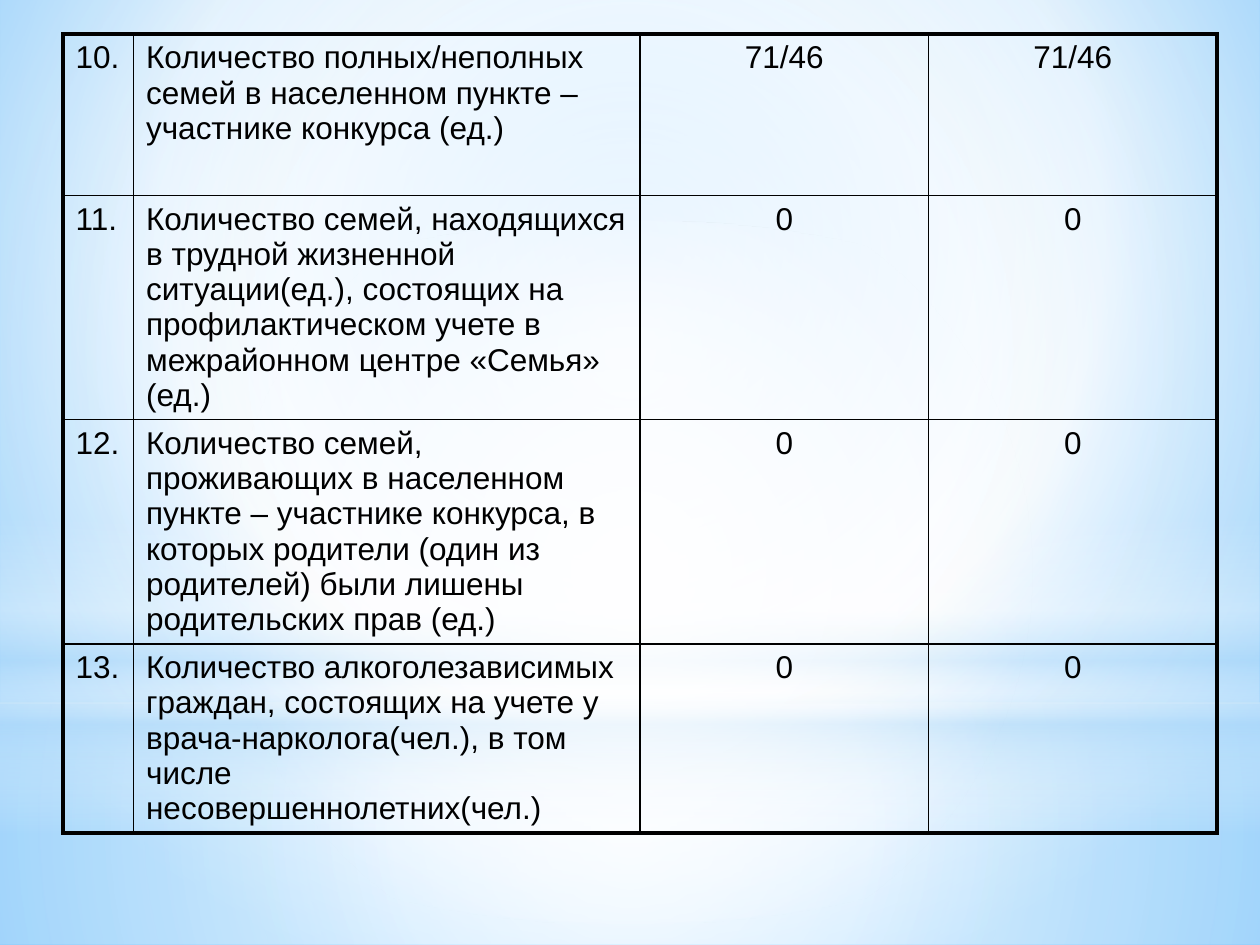
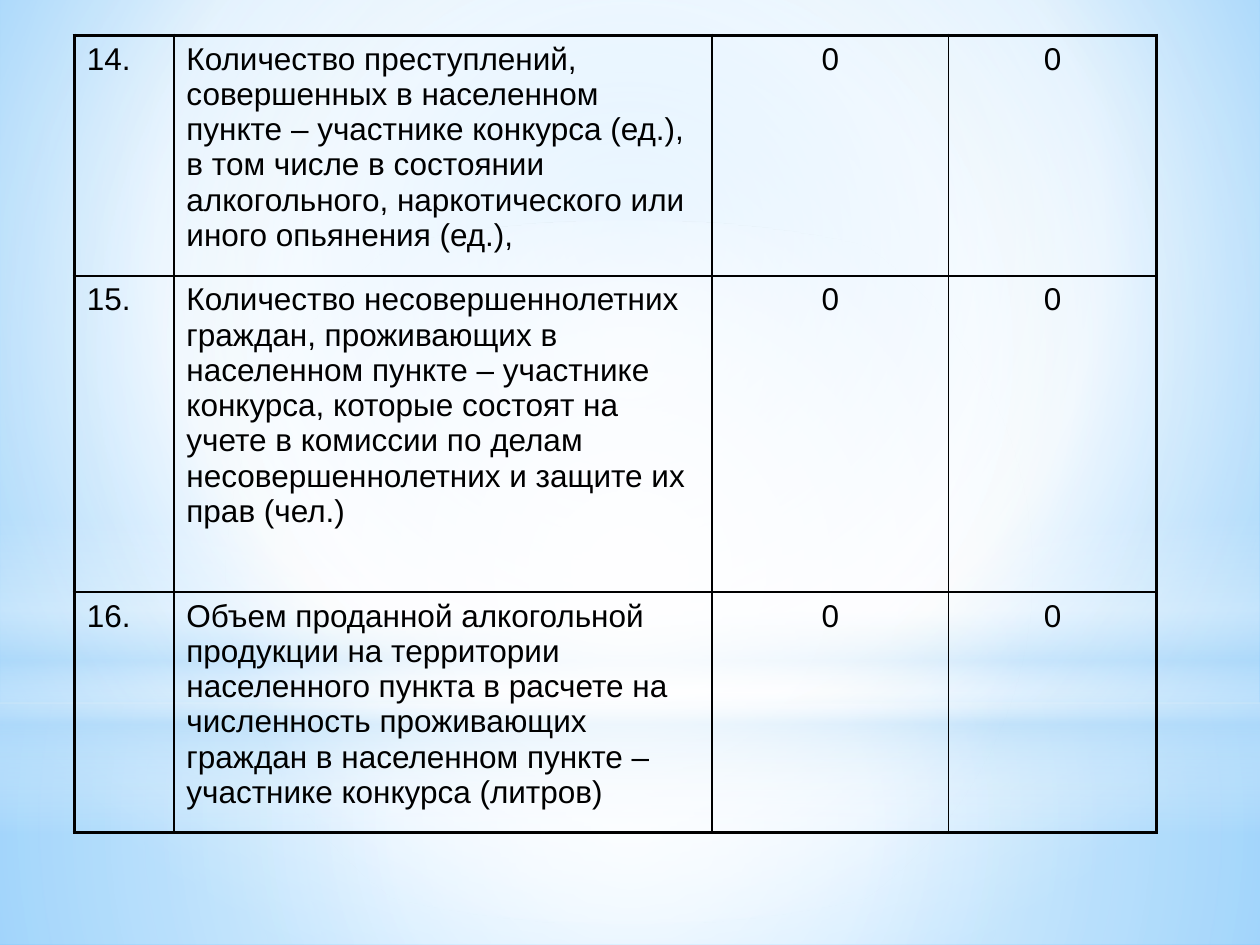
"""Builds two slides of a numbered indicator table over a shared sky background."""
from dataclasses import dataclass
from typing import Any, NamedTuple

from pptx import Presentation
from pptx.dml.color import RGBColor
from pptx.enum.shapes import MSO_SHAPE as Shape
from pptx.enum.text import PP_ALIGN as Align
from pptx.oxml import parse_xml
from pptx.oxml.ns import nsdecls, qn
from pptx.util import Inches, Length, Pt

GRID_COLUMNS, GRID_ROWS = 100, 75
SLIDE_WIDTH, SLIDE_HEIGHT = Inches(10), Inches(7.5)
WHITE, MIST, BLACK = "FFFFFF", "B4DCFA", "000000"
INNER_LINE, OUTER_LINE = Pt(1), Pt(2.25)
CENTRE = (50, 50, 50, 50)


class Stop(NamedTuple):
    position: int
    colour: str
    opacity: int = 100


class Area(NamedTuple):
    left: float
    top: float
    width: float
    height: float


class Indicator(NamedTuple):
    number: str
    wording: str
    before: str = "0"
    after: str = "0"


@dataclass(frozen=True)
class Layer:
    kind: Shape
    area: Area
    stops: tuple[Stop, ...]
    focus: tuple[int, ...] | None = CENTRE


@dataclass(frozen=True)
class IndicatorTable:
    left: float
    top: float
    columns: tuple[float, ...]
    rows: tuple[float, ...]
    indicators: tuple[Indicator, ...]


SKY = (Stop(0, "9ED5FF"), Stop(60, WHITE), Stop(100, "5BB9FF"))
LAYERS = (
    Layer(Shape.RECTANGLE, Area(0, 55.8, 100, 19.2),
          (Stop(0, WHITE, 91), Stop(37, WHITE, 76), Stop(100, MIST, 79))),
    Layer(Shape.RECTANGLE, Area(0, 0, 100, 55.8),
          (Stop(0, WHITE, 89), Stop(48, WHITE, 62), Stop(100, MIST, 79))),
    Layer(Shape.RECTANGLE, Area(0, 41.2, 100, 25),
          (Stop(0, WHITE, 0), Stop(29, WHITE, 30), Stop(45, MIST, 40),
           Stop(55, WHITE, 26), Stop(65, MIST, 60), Stop(100, WHITE, 0)), None),
    Layer(Shape.OVAL, Area(0, 17.5, 100, 55.8), (Stop(0, WHITE), Stop(56, WHITE, 0))),
)
TABLES = (
    IndicatorTable(5, 2.7, (5.6, 40.2, 22.9, 22.9), (12.8,) * 4, (
        Indicator("10.", "Количество полных/неполных семей в населенном пункте – "
                  "участнике конкурса (ед.)", "71/46", "71/46"),
        Indicator("11.", "Количество семей, находящихся в трудной жизненной "
                  "ситуации(ед.), состоящих на профилактическом учете в "
                  "межрайонном центре «Семья» (ед.)"),
        Indicator("12.", "Количество семей, проживающих в населенном пункте – "
                  "участнике конкурса, в которых родители (один из родителей) "
                  "были лишены родительских прав (ед.)"),
        Indicator("13.", "Количество алкоголезависимых граждан, состоящих на учете "
                  "у врача-нарколога(чел.), в том числе несовершеннолетних(чел.)"),
    )),
    IndicatorTable(5.9, 2.8, (7.9, 42.7, 18.8, 16.5), (19.1, 25.1, 19.1), (
        Indicator("14.", "Количество преступлений, совершенных в населенном пункте – "
                  "участнике конкурса (ед.), в том числе в состоянии алкогольного, "
                  "наркотического или иного опьянения (ед.),"),
        Indicator("15.", "Количество несовершеннолетних граждан, проживающих в "
                  "населенном пункте – участнике конкурса, которые состоят на учете "
                  "в комиссии по делам несовершеннолетних и защите их прав (чел.)"),
        Indicator("16.", "Объем проданной алкогольной продукции на территории "
                  "населенного пункта в расчете на численность проживающих граждан "
                  "в населенном пункте – участнике конкурса (литров)"),
    )),
)


def rgb(colour: str) -> RGBColor:
    return RGBColor.from_string(colour)


def across(columns: float) -> Length:
    return Length(round(SLIDE_WIDTH * columns / GRID_COLUMNS))


def down(rows: float) -> Length:
    return Length(round(SLIDE_HEIGHT * rows / GRID_ROWS))


def place(area: Area) -> tuple[Length, ...]:
    return across(area.left), down(area.top), across(area.width), down(area.height)


TEXT_FORMAT = {"name": "Arial", "size": Pt(18), "bold": False}
TABLE_FORMAT = {"first_row": False, "horz_banding": False}


def apply_format(target: Any, values: dict[str, Any]) -> None:
    for name, value in values.items():
        setattr(target, name, value)


def paint_gradient(owner: Any, element: Any, stops: tuple[Stop, ...],
                   focus: tuple[int, ...] | None) -> None:
    owner.fill.gradient()
    marks = "".join(
        f'<a:gs pos="{stop.position * 1000}"><a:srgbClr val="{rgb(stop.colour)}">'
        f'<a:alpha val="{stop.opacity * 1000}"/></a:srgbClr></a:gs>' for stop in stops)
    if focus is None:
        direction = '<a:lin ang="5400000" scaled="0"/>'
    else:
        sides = " ".join(f'{side}="{share * 1000}"' for side, share in zip("ltrb", focus))
        direction = f'<a:path path="circle"><a:fillToRect {sides}/></a:path>'
    old = element.find(f".//{qn('a:gradFill')}")
    old.getparent().replace(old, parse_xml(
        f'<a:gradFill {nsdecls("a")} rotWithShape="1"><a:gsLst>{marks}</a:gsLst>'
        f'{direction}</a:gradFill>'))


def build_master(deck: Any, page: Any) -> None:
    master = deck.slide_master
    paint_gradient(master.background, master.element, SKY, (20, 10, 20, 60))
    for index, layer in enumerate(LAYERS, start=2):
        shape = page.shapes.add_shape(layer.kind, *place(layer.area))
        shape.shadow.inherit = False
        shape.line.fill.background()
        paint_gradient(shape, shape.element, layer.stops, layer.focus)
        master.shapes.element.insert(index, shape.element)


def draw_borders(cell: Any, widths: dict[str, Length]) -> None:
    properties = cell._tc.get_or_add_tcPr()
    for index, (side, width) in enumerate(widths.items()):
        properties.insert(index, parse_xml(
            f'<a:ln{side} {nsdecls("a")} w="{int(width)}"><a:solidFill>'
            f'<a:srgbClr val="{rgb(BLACK)}"/></a:solidFill></a:ln{side}>'))


def write_cell(cell: Any, wording: str, centred: bool) -> None:
    cell.fill.background()
    para = cell.text_frame.paragraphs[0]
    para.alignment = Align.CENTER if centred else Align.LEFT
    span = para.add_run()
    span.text = wording
    apply_format(span.font, TEXT_FORMAT)
    span.font.color.rgb = rgb(BLACK)


def draw_table(page: Any, plan: IndicatorTable) -> None:
    last_row, last_column = len(plan.rows) - 1, len(plan.columns) - 1
    area = Area(plan.left, plan.top, sum(plan.columns), sum(plan.rows))
    table = page.shapes.add_table(last_row + 1, last_column + 1, *place(area)).table
    apply_format(table, TABLE_FORMAT)
    for column, width in zip(table.columns, plan.columns):
        column.width = across(width)
    for row, height in zip(table.rows, plan.rows):
        row.height = down(height)
    for row_index, indicator in enumerate(plan.indicators):
        for column_index, wording in enumerate(indicator):
            cell = table.cell(row_index, column_index)
            write_cell(cell, wording, centred=column_index > 1)
            outer = {"L": column_index == 0, "R": column_index == last_column,
                     "T": row_index == 0, "B": row_index == last_row}
            draw_borders(cell, {side: OUTER_LINE if edge else INNER_LINE
                                for side, edge in outer.items()})


def main() -> None:
    deck = Presentation()
    apply_format(deck, {"slide_width": SLIDE_WIDTH, "slide_height": SLIDE_HEIGHT})
    blank = deck.slide_layouts[6]
    pages = [deck.slides.add_slide(blank) for _ in TABLES]
    build_master(deck, pages[0])
    for page, plan in zip(pages, TABLES):
        draw_table(page, plan)
    deck.save("out.pptx")


if __name__ == "__main__":
    main()
